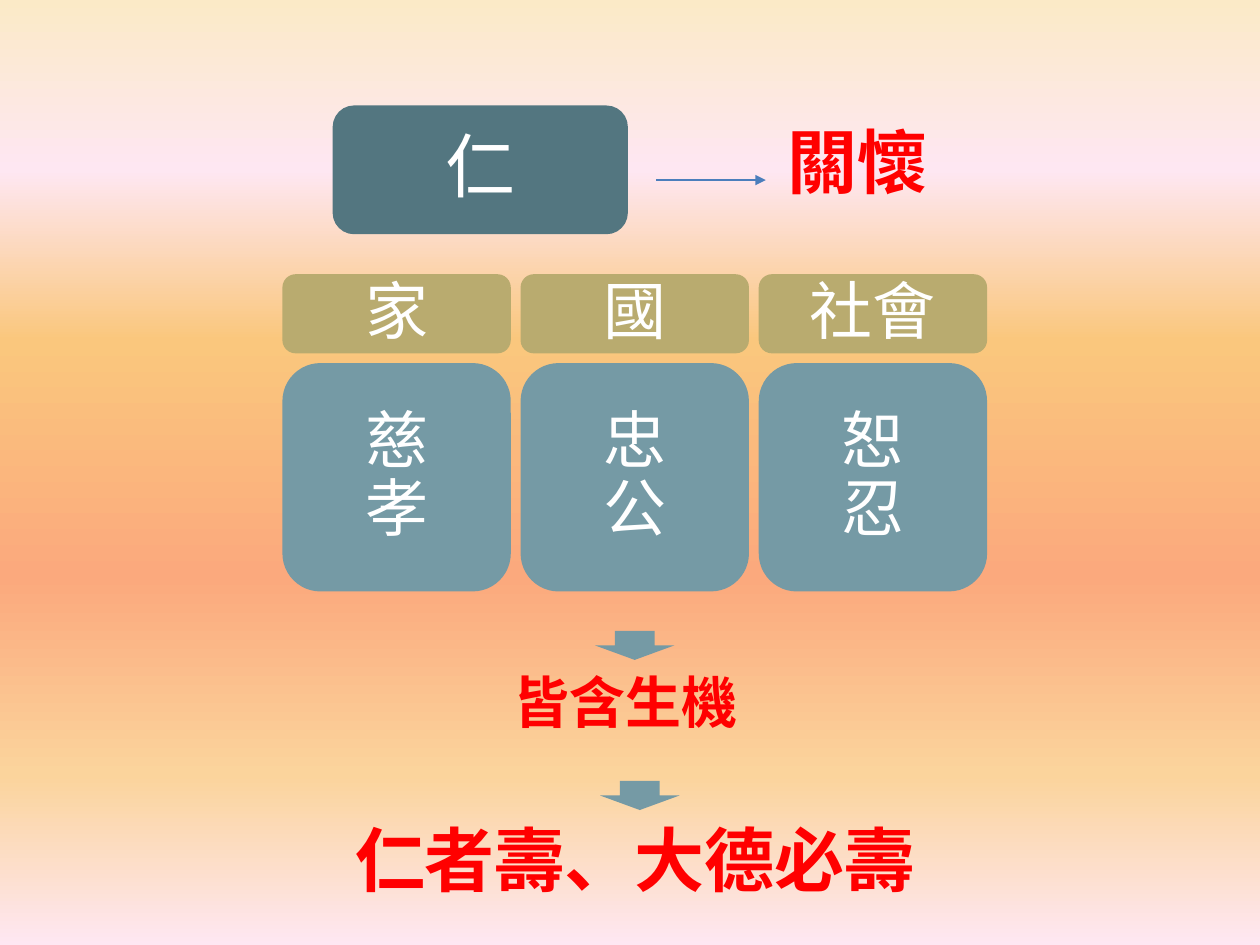
from lxml import etree
from pptx import Presentation
from pptx.dml.color import RGBColor
from pptx.enum.shapes import MSO_CONNECTOR, MSO_SHAPE
from pptx.enum.text import MSO_ANCHOR, MSO_AUTO_SIZE, PP_ALIGN
from pptx.oxml.ns import qn
from pptx.util import Pt

ROUNDED = MSO_SHAPE.ROUNDED_RECTANGLE
DOWN_ARROW = MSO_SHAPE.DOWN_ARROW
STRAIGHT = MSO_CONNECTOR.STRAIGHT
MIDDLE = MSO_ANCHOR.MIDDLE
GROW = MSO_AUTO_SIZE.SHAPE_TO_FIT_TEXT
LEFT, CENTER = PP_ALIGN.LEFT, PP_ALIGN.CENTER

WHITE = RGBColor(0xFF, 0xFF, 0xFF)
RED = RGBColor(0xFF, 0x00, 0x00)
DARK_TEAL = RGBColor(0x53, 0x76, 0x80)
TEAL = RGBColor(0x75, 0x9A, 0xA5)
OLIVE = RGBColor(0xB9, 0xAB, 0x6F)
BLUE = RGBColor(0x4B, 0x7E, 0xBC)

SUNSET = [(0, "FBEAC7"), (18, "FEE7F2"), (36, "FAC77D"),
          (61, "FBA97D"), (82, "FBD49C"), (100, "FEE7F2")]

FONT_JP = "Noto Sans CJK JP"
FONT_SC = "Noto Sans CJK SC"
LINE_SPACING = 0.9

# Each sphere of life with its virtues
SPHERES = [("家", ["慈", "孝"]), ("國", ["忠", "公"]), ("社會", ["恕", "忍"])]
COLUMN_LEFT, COLUMN_WIDTH, COLUMN_PITCH = 161.4, 130.5, 136.1


def paint_background(slide):
    fill = slide.background.fill
    fill.gradient()
    fill.gradient_angle = 270
    stops = slide.element.xpath(".//a:gsLst")[0]
    for stop in list(stops):
        stops.remove(stop)
    for percent, color in SUNSET:
        stop = etree.SubElement(stops, qn("a:gs"), pos=str(percent * 1000))
        etree.SubElement(stop, qn("a:srgbClr"), val=color)


def write(frame, lines, size, color, align, bold=False, font_name=FONT_JP):
    frame.text = "\n".join(lines)
    for paragraph in frame.paragraphs:
        paragraph.alignment = align
        paragraph.line_spacing = LINE_SPACING
        font = paragraph.font
        font.size, font.bold, font.name = Pt(size), bold, font_name
        font.color.rgb = color
        defaults = paragraph._p.xpath("a:pPr/a:defRPr")[0]
        etree.SubElement(defaults, qn("a:ea"), typeface=font_name)


def add_solid(slide, kind, left, top, width, height, color):
    solid = slide.shapes.add_shape(kind, Pt(left), Pt(top), Pt(width), Pt(height))
    solid.shadow.inherit = False
    solid.fill.solid()
    solid.fill.fore_color.rgb = color
    solid.line.fill.background()
    return solid


def add_node(slide, lines, left, top, width, height, color, size=36):
    frame = add_solid(slide, ROUNDED, left, top, width, height, color).text_frame
    frame.margin_top = frame.margin_bottom = 0
    frame.word_wrap = True
    frame.vertical_anchor = MIDDLE
    write(frame, lines, size, WHITE, CENTER)


def add_message(slide, text, left, top, width, height, size=40, font_name=FONT_JP):
    box = slide.shapes.add_textbox(Pt(left), Pt(top), Pt(width), Pt(height))
    frame = box.text_frame
    frame.word_wrap = True
    frame.auto_size = GROW
    write(frame, [text], size, RED, LEFT, True, font_name)


def add_arrow(slide, start, end, y):
    arrow = slide.shapes.add_connector(STRAIGHT, Pt(start), Pt(y), Pt(end), Pt(y))
    arrow.line.color.rgb = BLUE
    arrow.line.width = Pt(0.75)
    etree.SubElement(arrow.line._get_or_add_ln(), qn("a:tailEnd"), type="triangle")
    etree.SubElement(arrow._element.spPr, qn("a:effectLst"))


def main():
    prs = Presentation()
    prs.slide_width, prs.slide_height = Pt(720), Pt(540)
    slide = prs.slides.add_slide(prs.slide_layouts[6])
    paint_background(slide)

    # Spheres and their virtues
    for column, (sphere, virtues) in enumerate(SPHERES):
        left = COLUMN_LEFT + column * COLUMN_PITCH
        add_node(slide, virtues, left, 207.5, COLUMN_WIDTH, COLUMN_WIDTH, TEAL)
        add_node(slide, [sphere], left, 156.7, COLUMN_WIDTH, 45.2, OLIVE)

    # Benevolence and its meaning
    add_node(slide, ["仁"], 190.1, 60.3, 168.7, 73.6, DARK_TEAL, 40)
    add_arrow(slide, 374.9, 437.6, 102.9)
    add_message(slide, "關懷", 442.8, 69.8, 138.2, 55.4)

    # Conclusions
    add_solid(slide, DOWN_ARROW, 340, 360.5, 45.4, 16.6, TEAL)
    add_message(slide, "皆含生機", 286.6, 382.3, 147.6, 46, 32, FONT_SC)
    add_solid(slide, DOWN_ARROW, 342.9, 446.3, 45.4, 16.6, TEAL)
    add_message(slide, "仁者壽、大德必壽", 195.8, 468.7, 339.8, 55.4)

    prs.save("out.pptx")


if __name__ == "__main__":
    main()
